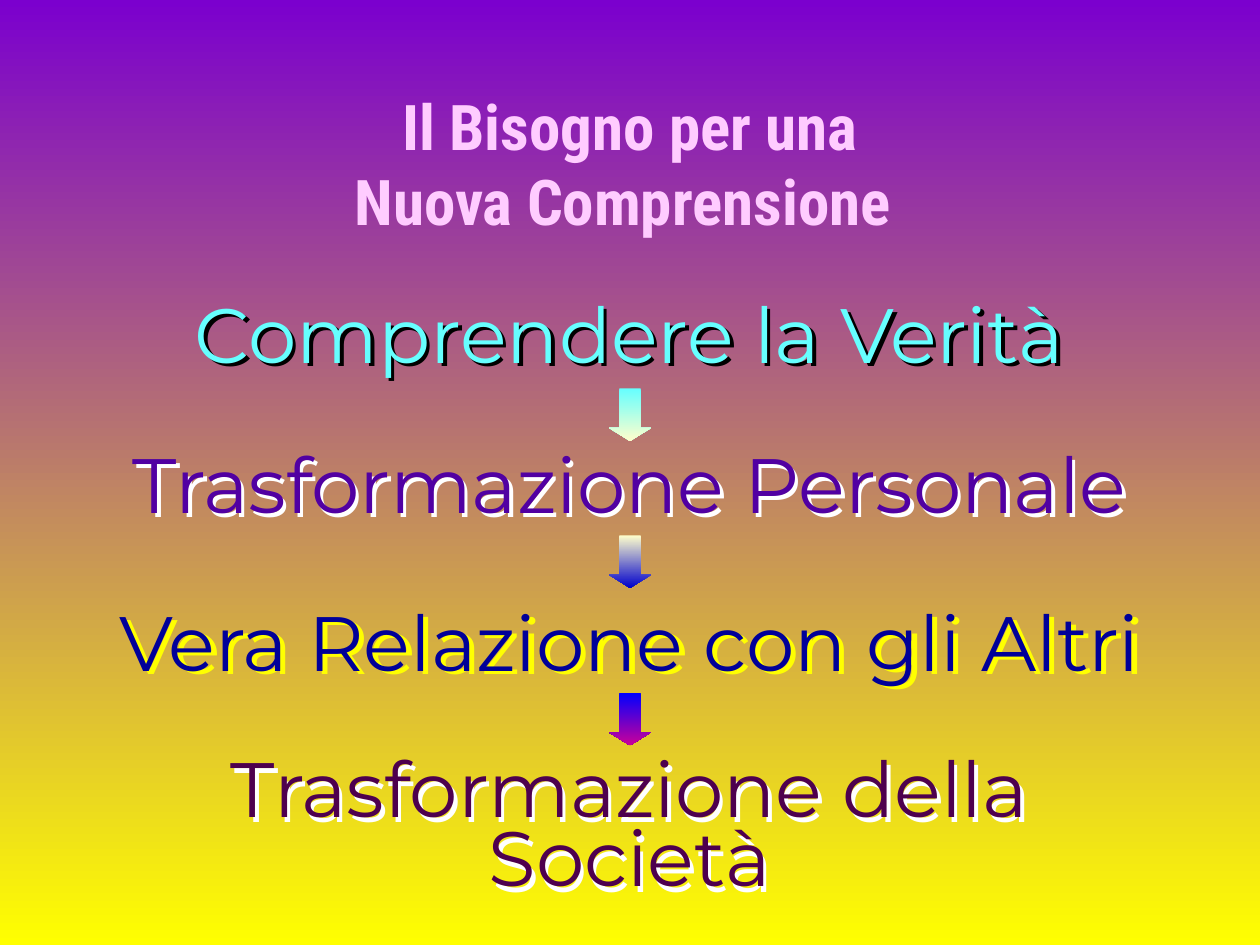
from dataclasses import dataclass
from math import atan2, degrees, hypot

from lxml import etree
from pptx import Presentation
from pptx.dml.color import RGBColor
from pptx.dml.fill import FillFormat
from pptx.enum.shapes import MSO_SHAPE
from pptx.enum.text import MSO_ANCHOR, PP_ALIGN
from pptx.oxml.ns import qn
from pptx.shapes.autoshape import Shape
from pptx.slide import Slide
from pptx.util import Pt

CENTER = PP_ALIGN.CENTER
TOP, MIDDLE = MSO_ANCHOR.TOP, MSO_ANCHOR.MIDDLE
DOWN_ARROW = MSO_SHAPE.DOWN_ARROW

SLIDE_WIDTH, SLIDE_HEIGHT = 720, 540
ARROW_WIDTH, ARROW_HEIGHT = 24, 30
DOWNWARD = 270

COLORS = {
    "violet": "7B00CE", "yellow": "FFFF00", "pink": "FFCCFF",
    "cyan": "66FFFF", "purple": "5100A2", "navy": "000099",
    "plum": "4E004E", "black": "000000", "white": "FFFFFF",
    "cream": "FFFFCC", "royal": "0000CC", "blue": "0000FF",
    "magenta": "CC0099",
}
TITLE_FORMAT = {"name": "Roboto Condensed", "size": Pt(36), "bold": True}
STEP_FORMAT = {"name": "Montserrat", "size": Pt(44)}


@dataclass
class Step:
    text: str
    top: float
    width: float
    height: float
    color: str
    shadow_color: str
    shadow_offset: tuple[float, float]
    line_spacing: float = 1.0


@dataclass
class Arrow:
    top: float
    start_color: str
    end_color: str


TITLE_LINES = ["Il Bisogno per una", "Nuova Comprensione "]
STEPS = [
    Step("Comprendere la Verità", 160, 624, 60, "cyan", "black", (2, 2)),
    Step("Trasformazione Personale", 246, 702, 60, "purple", "white", (2, 2)),
    Step("Vera Relazione con gli Altri", 336, 684, 60, "navy", "yellow", (3, 2)),
    Step("Trasformazione della Società", 432, 540, 89, "plum", "white", (2, 3), 0.75),
]
ARROWS = [
    Arrow(222, "cyan", "cream"),
    Arrow(306, "cream", "royal"),
    Arrow(396, "blue", "magenta"),
]


def rgb(color: str) -> RGBColor:
    return RGBColor.from_string(COLORS[color])


def fill_downward(fill: FillFormat, start_color: str, end_color: str) -> None:
    """Fill with a gradient running from top to bottom."""
    fill.gradient()
    fill.gradient_angle = DOWNWARD
    for stop, color in zip(fill.gradient_stops, (start_color, end_color)):
        stop.color.rgb = rgb(color)


def add_centered_text(slide: Slide, lines: list[str], top: float, width: float,
                      height: float, color: str, font_format: dict,
                      line_spacing: float = 1.0) -> Shape:
    """Add a horizontally centred text box with one paragraph per line."""
    left = (SLIDE_WIDTH - width) / 2
    box = slide.shapes.add_textbox(Pt(left), Pt(top), Pt(width), Pt(height))
    frame = box.text_frame
    frame.word_wrap = True
    frame.text = "\n".join(lines)
    for paragraph in frame.paragraphs:
        paragraph.alignment = CENTER
        paragraph.line_spacing = line_spacing
        font = paragraph.runs[0].font
        for attribute, value in font_format.items():
            setattr(font, attribute, value)
        font.color.rgb = rgb(color)
    return box


def add_text_shadow(box: Shape, color: str, offset: tuple[float, float]) -> None:
    """Give an unfilled box a hard shadow, which falls from its letters."""
    right, down = offset
    effects = etree.SubElement(box.element.spPr, qn("a:effectLst"))
    shadow = etree.SubElement(
        effects, qn("a:outerShdw"),
        dist=str(Pt(hypot(right, down))),
        dir=str(round(degrees(atan2(down, right)) * 60000)),
        algn="ctr", rotWithShape="0",
    )
    etree.SubElement(shadow, qn("a:srgbClr"), val=COLORS[color])


def add_title(slide: Slide) -> None:
    box = add_centered_text(slide, TITLE_LINES, 45, 654, 96, "pink", TITLE_FORMAT)
    box.text_frame.word_wrap = False
    box.text_frame.vertical_anchor = MIDDLE


def add_step(slide: Slide, step: Step) -> None:
    box = add_centered_text(slide, [step.text], step.top, step.width, step.height,
                            step.color, STEP_FORMAT, step.line_spacing)
    box.text_frame.vertical_anchor = TOP
    add_text_shadow(box, step.shadow_color, step.shadow_offset)


def add_arrow(slide: Slide, arrow: Arrow) -> None:
    left = (SLIDE_WIDTH - ARROW_WIDTH) / 2
    shape = slide.shapes.add_shape(DOWN_ARROW, Pt(left), Pt(arrow.top),
                                   Pt(ARROW_WIDTH), Pt(ARROW_HEIGHT))
    shape.adjustments[0] = 0.5
    shape.adjustments[1] = 0.31
    fill_downward(shape.fill, arrow.start_color, arrow.end_color)
    shape.line.fill.background()
    shape.shadow.inherit = False


def main() -> None:
    presentation = Presentation()
    presentation.slide_width = Pt(SLIDE_WIDTH)
    presentation.slide_height = Pt(SLIDE_HEIGHT)
    slide = presentation.slides.add_slide(presentation.slide_layouts[6])
    fill_downward(slide.background.fill, "violet", "yellow")
    for step in STEPS:
        add_step(slide, step)
    add_title(slide)
    for arrow in ARROWS:
        add_arrow(slide, arrow)
    presentation.save("out.pptx")


if __name__ == "__main__":
    main()
